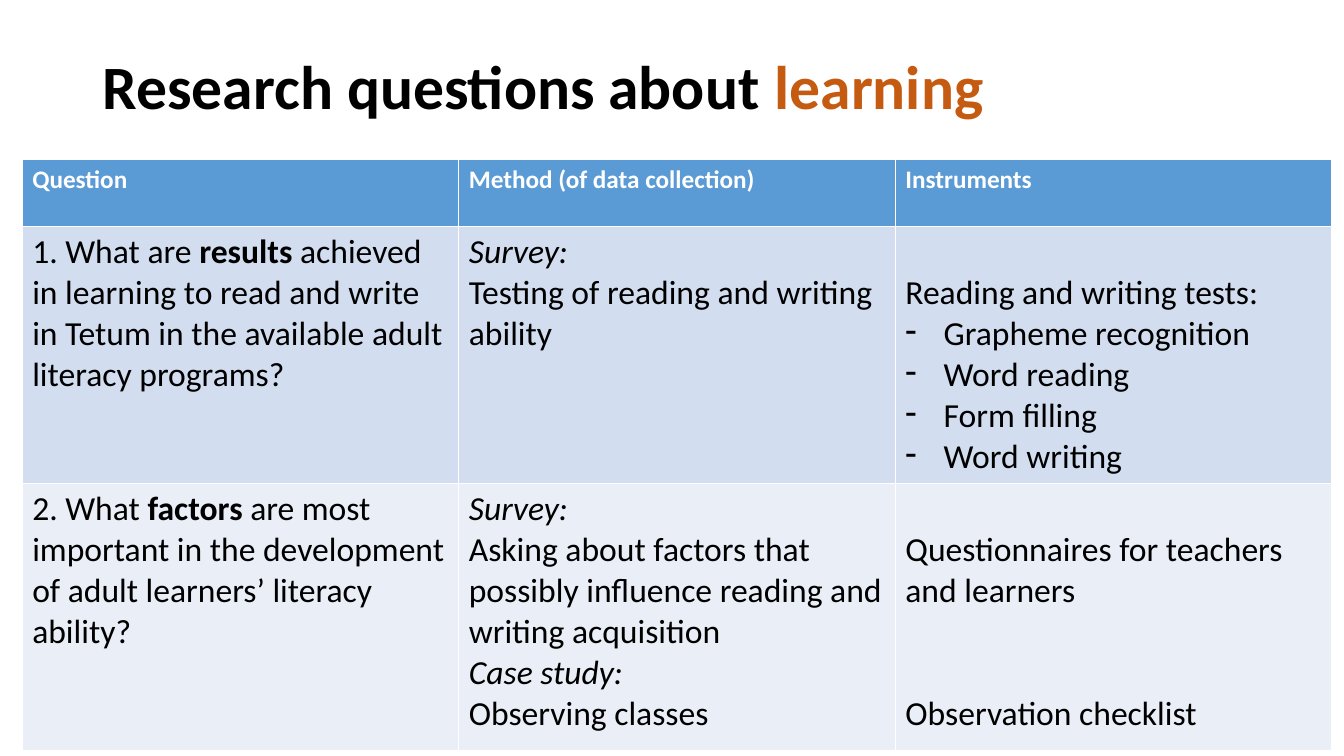
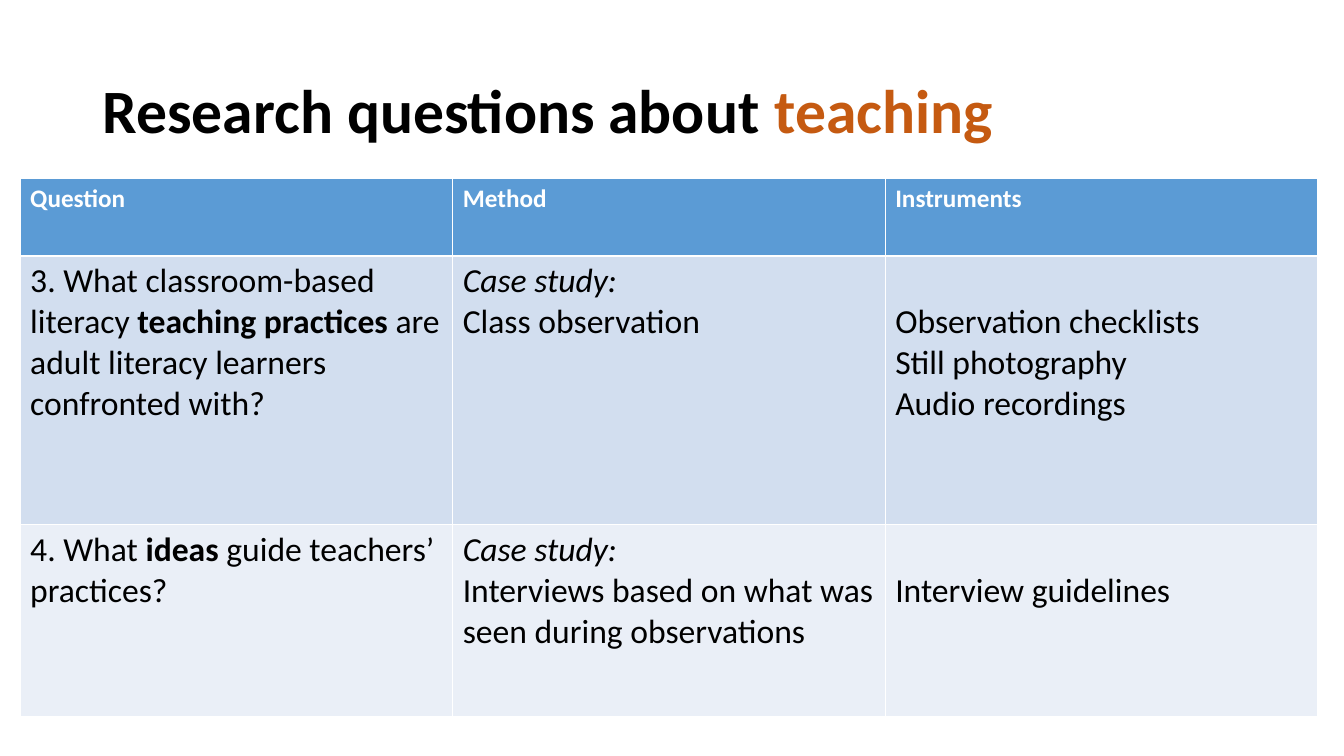
from lxml import etree
from pptx import Presentation
from pptx.dml.color import RGBColor
from pptx.enum import text as t
from pptx.oxml.ns import qn
from pptx.util import Inches, Pt

FONT = "Calibri"
BLACK, WHITE, ORANGE = "000000", "FFFFFF", "C55A11"
FILLS = ["5B9BD5", "D2DEEF", "EAEFF7"]  # header, then the two body rows
LINE = 29.3  # height in points of one 24 pt line

# Text between asterisks is emphasised: bold in questions, italic in methods.
# A line starting with "- " is a bullet; (n, line) leaves n lines free above.
SLIDES = [
    dict(
        topic="learning", title_h=0.98, left=0.22, top=1.58,
        col_w=4.33, row_h=[0.67, 2.55, 2.65],
        rows=[
            [["Question"], ["Method (of data collection)"], ["Instruments"]],
            [
                ["1. What are *results* achieved in learning to read and write "
                 "in Tetum in the available adult literacy programs?"],
                ["*Survey:*", "Testing of reading and writing ability"],
                ["Reading and writing tests:", "- Grapheme recognition",
                 "- Word reading", "- Form filling", "- Word writing"],
            ],
            [
                ["2. What *factors* are most important in the development of "
                 "adult learners’ literacy ability?"],
                ["*Survey:*", "Asking about factors that possibly influence "
                 "reading and writing acquisition",
                 "*Case study:*", "Observing classes"],
                ["Questionnaires for teachers and learners",
                 (2, "Observation checklist")],
            ],
        ],
    ),
    dict(
        topic="teaching", title_h=1.45, left=0.2, top=1.77,
        col_w=4.29, row_h=[0.77, 2.66, 1.91],
        rows=[
            [["Question"], ["Method"], ["Instruments"]],
            [
                ["3. What classroom-based literacy *teaching practices *are "
                 "adult literacy learners confronted with?"],
                ["*Case study:*", "Class observation"],
                ["Observation checklists", "Still photography",
                 "Audio recordings"],
            ],
            [
                ["4. What *ideas* guide teachers’ practices?"],
                ["*Case study:*", "Interviews based on what was seen during "
                 "observations"],
                ["Interview guidelines"],
            ],
        ],
    ),
]


def rgb(code):
    return RGBColor.from_string(code)


def write(para, text, size=24, color=BLACK, bold=False, accent=None):
    """Add text to para; parts between asterisks take the accent format."""
    for i, part in enumerate(text.split("*")):
        if not part:
            continue
        look = dict(color=color, bold=bold, italic=False)
        if i % 2:
            look.update(accent or {})
        run = para.add_run()
        run.text = part
        font = run.font
        font.name, font.size = FONT, Pt(size)
        font.bold, font.italic = look["bold"], look["italic"]
        font.color.rgb = rgb(look["color"])


ACCENTS = [dict(bold=True), dict(italic=True), None]

prs = Presentation()
prs.slide_width, prs.slide_height = Inches(13.33), Inches(7.5)

for page in SLIDES:
    slide = prs.slides.add_slide(prs.slide_layouts[6])

    title = slide.shapes.add_textbox(
        Inches(0.92), Inches(0.4), Inches(11.5), Inches(page["title_h"]))
    frame = title.text_frame
    frame.word_wrap = True
    frame.vertical_anchor = t.MSO_ANCHOR.MIDDLE
    frame.paragraphs[0].line_spacing = 0.9
    write(frame.paragraphs[0], f"Research questions about *{page['topic']}*",
          size=44, bold=True, accent=dict(color=ORANGE))

    rows, heights = page["rows"], page["row_h"]
    table = slide.shapes.add_table(
        len(rows), len(rows[0]), Inches(page["left"]), Inches(page["top"]),
        Inches(page["col_w"] * len(rows[0])), Inches(sum(heights))).table
    for col in table.columns:
        col.width = Inches(page["col_w"])

    for r, row in enumerate(rows):
        table.rows[r].height = Inches(heights[r])
        for c, lines in enumerate(row):
            cell = table.cell(r, c)
            cell.fill.solid()
            cell.fill.fore_color.rgb = rgb(FILLS[r])
            if r and c == 2:  # instruments start level with the second line
                cell.margin_top = Inches(0.05) + Pt(LINE)
            for n, line in enumerate(lines):
                body = cell.text_frame
                para = body.add_paragraph() if n else body.paragraphs[0]
                if isinstance(line, tuple):
                    gap, line = line
                    para.space_before = Pt(gap * LINE)
                if line.startswith("- "):
                    line = line[2:]
                    props = para._p.get_or_add_pPr()
                    props.set("marL", str(Inches(0.38)))
                    props.set("indent", str(-Inches(0.38)))
                    etree.SubElement(props, qn("a:buChar")).set("char", "-")
                if r:
                    write(para, line, accent=ACCENTS[c])
                else:
                    write(para, line, size=18, color=WHITE, bold=True)

prs.save("out.pptx")
